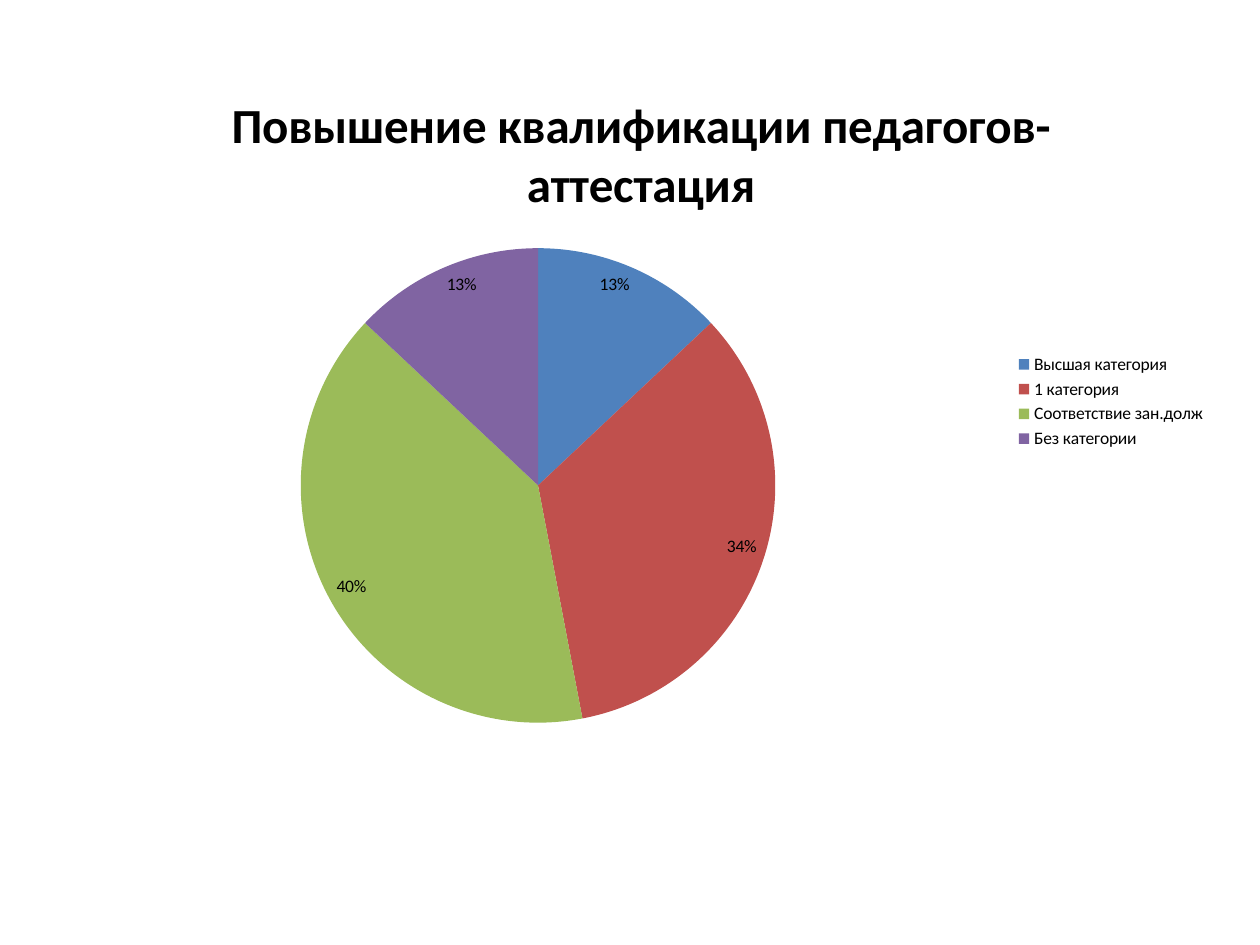
from pptx import Presentation
from pptx.chart.data import CategoryChartData
from pptx.dml.color import RGBColor
from pptx.enum.chart import XL_CHART_TYPE, XL_LABEL_POSITION, XL_LEGEND_POSITION
from pptx.util import Cm, Pt

PIE = XL_CHART_TYPE.PIE
INSIDE = XL_LABEL_POSITION.INSIDE_END
RIGHT = XL_LEGEND_POSITION.RIGHT

BLACK = RGBColor(0x00, 0x00, 0x00)
BLUE = RGBColor(0x4F, 0x81, 0xBD)
RED = RGBColor(0xC0, 0x50, 0x4D)
GREEN = RGBColor(0x9B, 0xBB, 0x59)
PURPLE = RGBColor(0x80, 0x64, 0xA2)

FONT = "Calibri"
TITLE = "Повышение квалификации педагогов-аттестация"
SHARES = [
    ("Высшая категория", 0.13, BLUE),
    ("1 категория", 0.34, RED),
    ("Соответствие зан.долж", 0.4, GREEN),
    ("Без категории", 0.13, PURPLE),
]


def style(font, size, bold=False):
    """Set the common typeface and colour with a given size."""
    font.name = FONT
    font.size = Pt(size)
    font.bold = bold
    font.color.rgb = BLACK


def add_pie(slide, left, top, width, height):
    """Place the titled pie of staff categories in the given box."""
    data = CategoryChartData(number_format="0%")
    data.categories = [name for name, _, _ in SHARES]
    data.add_series("Series 1", [share for _, share, _ in SHARES])
    chart = slide.shapes.add_chart(PIE, left, top, width, height, data).chart
    style(chart.font, 10)

    chart.has_title = True
    frame = chart.chart_title.text_frame
    frame.text = TITLE
    style(frame.paragraphs[0].font, 28, True)
    chart.chart_title.include_in_layout = False

    chart.has_legend = True
    chart.legend.position = RIGHT
    chart.legend.include_in_layout = False

    plot = chart.plots[0]
    plot.vary_by_categories = True
    plot.has_data_labels = True
    labels = plot.data_labels
    labels.show_value = True
    labels.show_percentage = False
    labels.number_format = "0%"
    labels.number_format_is_linked = False
    labels.position = INSIDE
    style(labels.font, 10)

    for i, (_, _, color) in enumerate(SHARES):
        fill = plot.series[0].points[i].format.fill
        fill.solid()
        fill.fore_color.rgb = color


def main():
    """Build the slide and save it."""
    deck = Presentation()
    deck.slide_width = Cm(25.4)
    deck.slide_height = Cm(19.05)
    slide = deck.slides.add_slide(deck.slide_layouts[6])
    add_pie(slide, Cm(1.27), Cm(1.27), Cm(23.3), Cm(13.65))
    deck.save("out.pptx")


if __name__ == "__main__":
    main()
